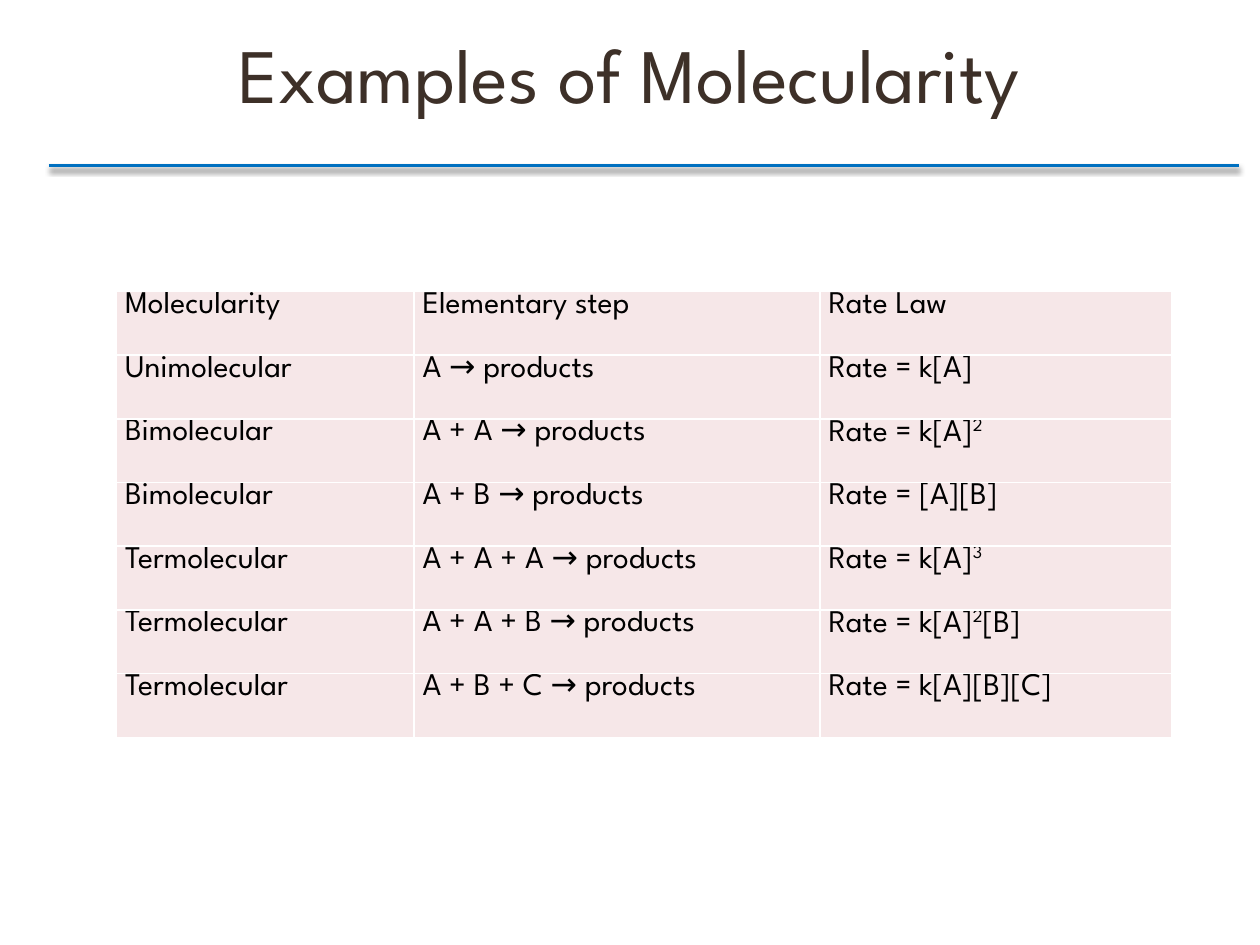
"""Build the slide on examples of molecularity."""
import lxml.etree
import pptx
import pptx.dml.color
import pptx.enum.shapes
import pptx.enum.text
import pptx.oxml
import pptx.oxml.ns
import pptx.util
from dataclasses import dataclass

Pt = pptx.util.Pt
qn = pptx.oxml.ns.qn

TITLE = "Examples of Molecularity"
ROWS = [
    ("Molecularity", "Elementary step", "Rate Law"),
    ("Unimolecular", "A → products", "Rate = k[A]"),
    ("Bimolecular", "A + A → products", "Rate = k[A]^2^"),
    ("Bimolecular", "A + B → products", "Rate = [A][B]"),
    ("Termolecular", "A + A + A → products", "Rate = k[A]^3^"),
    ("Termolecular", "A + A + B → products", "Rate = k[A]^2^[B]"),
    ("Termolecular", "A + B + C → products", "Rate = k[A][B][C]"),
]
COLUMN_WIDTHS = (170, 232, 201)
ROW_HEIGHT = 36.4
TABLE_LEFT, TABLE_TOP = 66.5, 166.5
RULE_LEFT, RULE_RIGHT, RULE_TOP = 28, 708, 94.5


@dataclass(frozen=True)
class Theme:
    font: str = "League Spartan"
    title: str = "3D3028"
    text: str = "000000"
    rule: str = "0070C0"
    cell: str = "F6E7E8"
    border: str = "FFFFFF"
    title_size: int = 44
    text_size: int = 18


THEME = Theme()


def rgb(value):
    return pptx.dml.color.RGBColor.from_string(value)


def add_run(p, text, size, color):
    r = p.add_run()
    r.text = text
    r.font.name = THEME.font
    r.font.size = Pt(size)
    r.font.color.rgb = rgb(color)
    return r


def add_title(s):
    sp = s.shapes.add_textbox(Pt(0), Pt(8), Pt(719.5), Pt(77.5))
    tf = sp.text_frame
    tf.word_wrap = True
    tf.vertical_anchor = pptx.enum.text.MSO_ANCHOR.MIDDLE
    p = tf.paragraphs[0]
    p.alignment = pptx.enum.text.PP_ALIGN.CENTER
    p.line_spacing = 0.8
    add_run(p, TITLE, THEME.title_size, THEME.title)


def add_rule(s):
    sp = s.shapes.add_connector(
        pptx.enum.shapes.MSO_CONNECTOR.STRAIGHT,
        Pt(RULE_LEFT), Pt(RULE_TOP), Pt(RULE_RIGHT), Pt(RULE_TOP))
    sp.line.color.rgb = rgb(THEME.rule)
    sp.line.width = Pt(1.5)
    effects = lxml.etree.SubElement(sp._element.spPr, qn("a:effectLst"))
    shadow = lxml.etree.SubElement(
        effects, qn("a:outerShdw"), blurRad=str(Pt(3)), dist=str(Pt(2.4)),
        dir=str(90 * 60000), rotWithShape="0")
    color = lxml.etree.SubElement(shadow, qn("a:srgbClr"), val="000000")
    lxml.etree.SubElement(color, qn("a:alpha"), val="45000")


def add_borders(cell):
    tc_pr = cell._tc.get_or_add_tcPr()
    for side in ("lnL", "lnR", "lnT", "lnB"):
        line = lxml.etree.SubElement(tc_pr, qn(f"a:{side}"), w=str(Pt(1)))
        fill = lxml.etree.SubElement(line, qn("a:solidFill"))
        lxml.etree.SubElement(fill, qn("a:srgbClr"), val=THEME.border)


def fill_cell(cell, text):
    cell.margin_left = cell.margin_right = Pt(5)
    cell.margin_top = cell.margin_bottom = Pt(0)
    add_borders(cell)
    cell.fill.solid()
    cell.fill.fore_color.rgb = rgb(THEME.cell)
    p = cell.text_frame.paragraphs[0]
    for i, part in enumerate(text.split("^")):
        if part:
            r = add_run(p, part, THEME.text_size, THEME.text)
            if i % 2:
                r.font._element.set("baseline", "30000")


def add_rate_table(s):
    table = s.shapes.add_table(
        len(ROWS), len(COLUMN_WIDTHS), Pt(TABLE_LEFT), Pt(TABLE_TOP),
        Pt(sum(COLUMN_WIDTHS)), Pt(ROW_HEIGHT * len(ROWS))).table
    table.first_row = table.horz_banding = False
    for column, width in zip(table.columns, COLUMN_WIDTHS):
        column.width = Pt(width)
    for row, texts in zip(table.rows, ROWS):
        row.height = Pt(ROW_HEIGHT)
        for cell, text in zip(row.cells, texts):
            fill_cell(cell, text)


def main():
    prs = pptx.Presentation()
    prs.slide_width, prs.slide_height = Pt(720), Pt(540)
    s = prs.slides.add_slide(prs.slide_layouts[6])
    add_title(s)
    add_rule(s)
    add_rate_table(s)
    prs.save("out.pptx")


if __name__ == "__main__":
    main()
